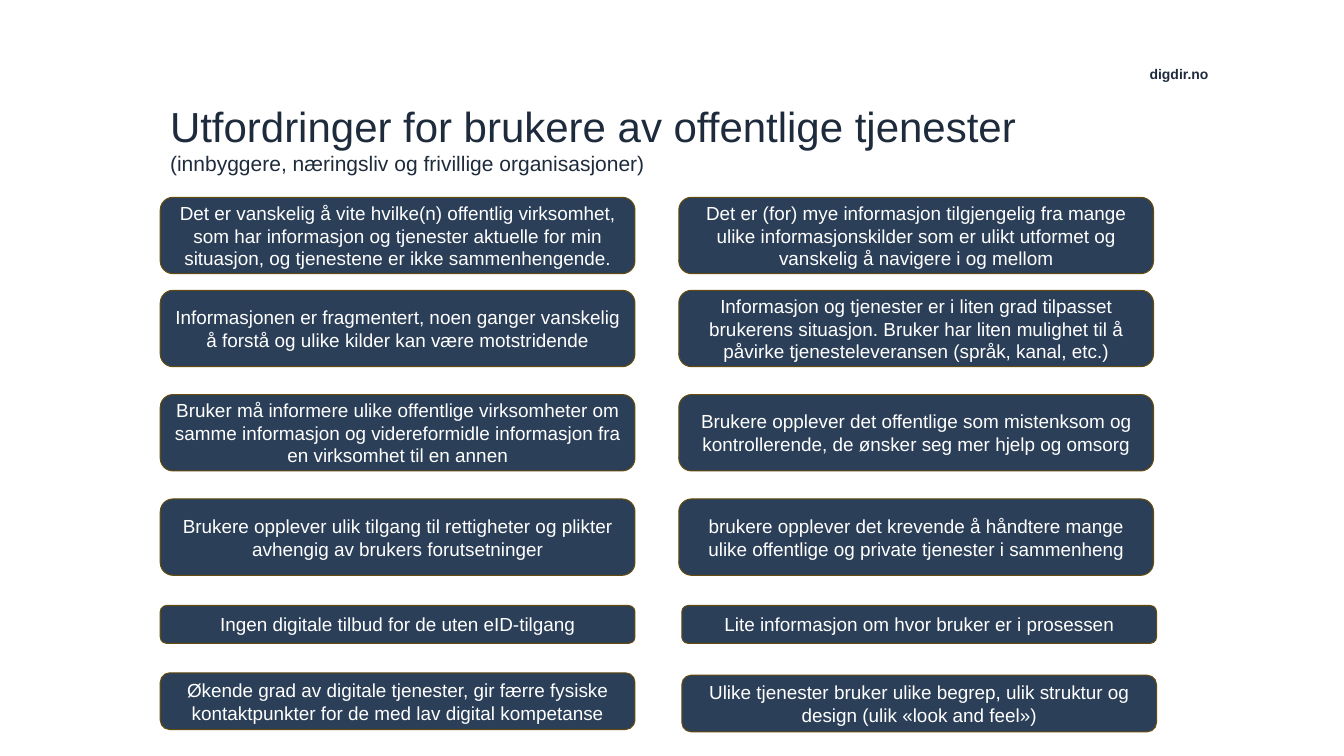
from pptx import Presentation
from pptx.dml.color import RGBColor
from pptx.enum.shapes import MSO_SHAPE
from pptx.enum.text import MSO_ANCHOR, MSO_AUTO_SIZE, PP_ALIGN
from pptx.util import Pt

ROUNDED = MSO_SHAPE.ROUNDED_RECTANGLE
TOP, MIDDLE = MSO_ANCHOR.TOP, MSO_ANCHOR.MIDDLE
LEFT, CENTER = PP_ALIGN.LEFT, PP_ALIGN.CENTER
NO_FIT = MSO_AUTO_SIZE.NONE

INK = RGBColor(0x1E, 0x2B, 0x3C)
NAVY = RGBColor(0x2C, 0x3F, 0x58)
BRONZE = RGBColor(0x64, 0x4B, 0x0E)
WHITE = RGBColor(0xFF, 0xFF, 0xFF)

TITLE_ONLY = 5
LEFT_COLUMN = 152.64
RIGHT_COLUMN = 646.56
LOWER_RIGHT_COLUMN = 649.44
CARD_WIDTH = 452.16
TALL, SINGLE, DOUBLE = 72.7, 36, 54

CHALLENGES = [
    (187.9, 187.9, RIGHT_COLUMN, TALL,
     "Det er vanskelig å vite hvilke(n) offentlig virksomhet, som har informasjon og tjenester "
     "aktuelle for min situasjon, og tjenestene er ikke sammenhengende.",
     "Det er (for) mye informasjon tilgjengelig fra mange ulike informasjonskilder som er ulikt "
     "utformet og vanskelig å navigere i og mellom"),
    (276.5, 276.5, RIGHT_COLUMN, TALL,
     "Informasjonen er fragmentert, noen ganger vanskelig å forstå og ulike kilder kan være "
     "motstridende",
     "Informasjon og tjenester er i liten grad tilpasset brukerens situasjon. Bruker har liten "
     "mulighet til å påvirke tjenesteleveransen (språk, kanal, etc.)"),
    (375.8, 375.8, RIGHT_COLUMN, TALL,
     "Bruker må informere ulike offentlige virksomheter om samme informasjon og videreformidle "
     "informasjon fra en virksomhet til en annen",
     "Brukere opplever det offentlige som mistenksom og kontrollerende, de ønsker seg mer hjelp "
     "og omsorg"),
    (475.2, 475.2, RIGHT_COLUMN, TALL,
     "Brukere opplever ulik tilgang til rettigheter og plikter avhengig av brukers forutsetninger",
     "brukere opplever det krevende å håndtere mange ulike offentlige og private tjenester i "
     "sammenheng"),
    (576.7, 576.7, LOWER_RIGHT_COLUMN, SINGLE,
     "Ingen digitale tilbud for de uten eID-tilgang",
     "Lite informasjon om hvor bruker er i prosessen"),
    (640.8, 643, LOWER_RIGHT_COLUMN, DOUBLE,
     "Økende grad av digitale tjenester, gir færre fysiske kontaktpunkter for de med lav digital "
     "kompetanse",
     "Ulike tjenester bruker ulike begrep, ulik struktur og design (ulik «look and feel»)"),
]


class PageBuilder:
    font_name = "Arial"

    def __init__(self, page):
        self.page = page

    def apply(self, target, formats):
        for name, value in formats.items():
            setattr(target, name, value)

    def add_span(self, para, text, size, color, bold=False):
        span = para.add_run()
        span.text = text
        self.apply(span.font, {"name": self.font_name, "size": Pt(size), "bold": bold})
        span.font.color.rgb = color

    def title(self, heading, subheading, left, top, width, height):
        box = self.page.shapes.title
        self.apply(box, {"left": Pt(left), "top": Pt(top),
                         "width": Pt(width), "height": Pt(height)})
        self.apply(box.text_frame, {
            "margin_left": Pt(9.36), "margin_right": Pt(9.36),
            "margin_top": Pt(5.04), "margin_bottom": Pt(5.04),
            "vertical_anchor": TOP, "word_wrap": True, "auto_size": NO_FIT})
        para = box.text_frame.paragraphs[0]
        para.alignment = LEFT
        self.add_span(para, heading, 40, INK)
        para.add_line_break()
        self.add_span(para, subheading, 20, INK)

    def label(self, text, left, top, width, height):
        box = self.page.shapes.add_textbox(Pt(left), Pt(top), Pt(width), Pt(height))
        box.text_frame.word_wrap = True
        self.add_span(box.text_frame.paragraphs[0], text, 13.3, INK, bold=True)

    def card(self, text, left, top, height):
        box = self.page.shapes.add_shape(ROUNDED, Pt(left), Pt(top), Pt(CARD_WIDTH), Pt(height))
        box.shadow.inherit = False
        box.fill.solid()
        box.fill.fore_color.rgb = NAVY
        box.line.color.rgb = BRONZE
        box.line.width = Pt(1)
        self.apply(box.text_frame, {"vertical_anchor": MIDDLE, "word_wrap": True})
        para = box.text_frame.paragraphs[0]
        para.alignment = CENTER
        self.add_span(para, text, 18, WHITE)


def main():
    deck = Presentation()
    deck.slide_width, deck.slide_height = Pt(1280.16), Pt(720)
    builder = PageBuilder(deck.slides.add_slide(deck.slide_layouts[TITLE_ONLY]))
    builder.label("digdir.no", 1087.92, 59.04, 81.36, 23.76)
    builder.title("Utfordringer for brukere av offentlige tjenester",
                  "(innbyggere, næringsliv og frivillige organisasjoner)",
                  LEFT_COLUMN, 90.72, 1010.16, 82.08)
    for left_top, right_top, right_column, height, left_text, right_text in CHALLENGES:
        builder.card(left_text, LEFT_COLUMN, left_top, height)
        builder.card(right_text, right_column, right_top, height)
    deck.save("out.pptx")


if __name__ == "__main__":
    main()
